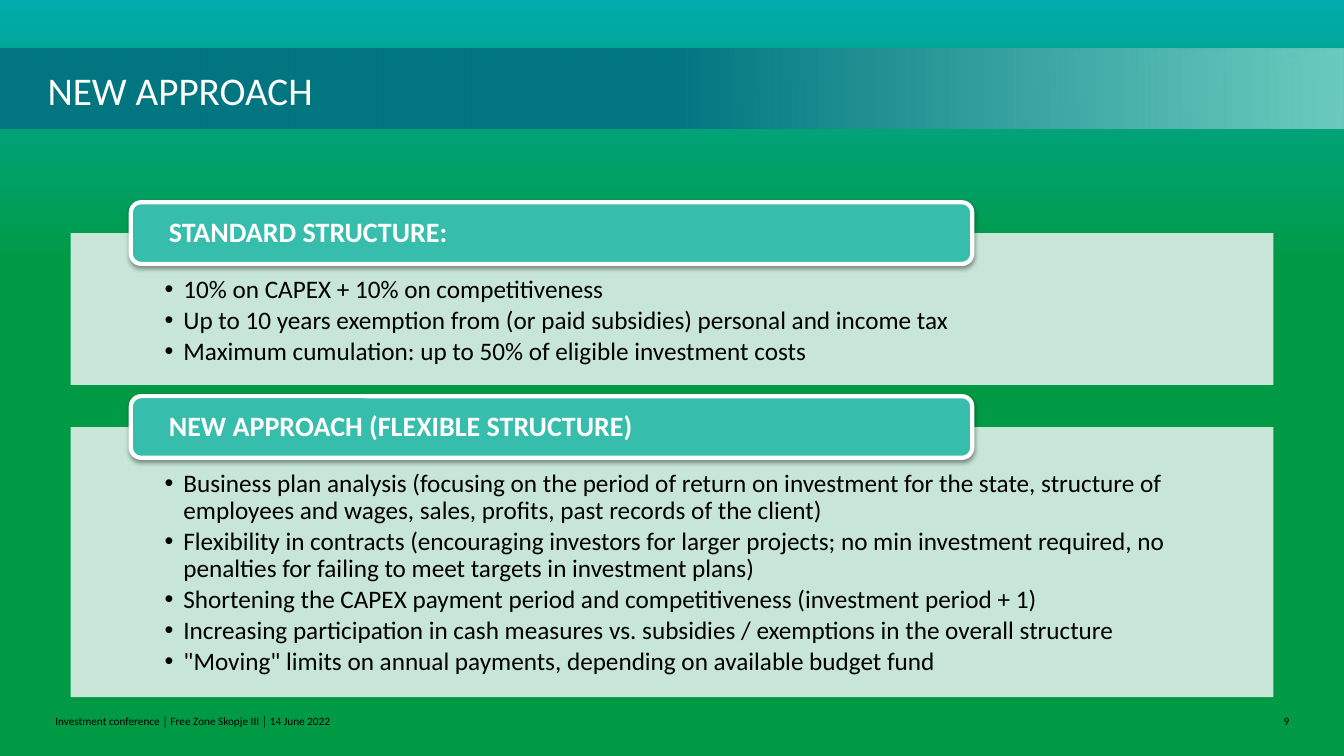
from lxml.etree import SubElement as Sub
from pptx import Presentation
from pptx.dml.color import RGBColor as Rgb
from pptx.enum.shapes import MSO_SHAPE as Shape
from pptx.enum.text import MSO_ANCHOR as Anchor, MSO_AUTO_SIZE as Auto, PP_ALIGN as Align
from pptx.oxml.ns import qn
from pptx.util import Pt

INK = {"sky": "00ABAB", "grass": "009A44", "mint": "71CEC2", "teal": "007680",
       "pale": "DDEFE8", "tab": "37BDAC", "white": "FFFFFF", "black": "000000"}


def rgb(name):
    """Return the named colour."""
    return Rgb.from_string(INK[name])


def place(shape, box):
    """Move a shape to a box given in points."""
    shape.left, shape.top, shape.width, shape.height = map(Pt, box)


def fade(fill, root, stops, angle):
    """Give a fill a linear gradient of (position, colour, opacity) stops."""
    fill.gradient()
    grad = root.find(".//" + qn("a:gradFill"))
    for part in list(grad):
        grad.remove(part)
    group = Sub(grad, qn("a:gsLst"))
    for pos, name, alpha in stops:
        stop = Sub(group, qn("a:gs"), pos=str(pos * 1000))
        tone = Sub(stop, qn("a:srgbClr"), val=INK[name])
        Sub(tone, qn("a:alpha"), val=str(alpha * 1000))
    Sub(grad, qn("a:lin"), ang=str(angle * 60000), scaled="0")


def write(shape, *lines, size=18, ink="black", bold=False, align=Align.LEFT,
          anchor=Anchor.TOP, pad=(0, 0, 0, 0), lead=1, after=0, dots=False):
    """Write lines of text into a shape in one format."""
    frame = shape.text_frame
    frame.word_wrap = True
    frame.auto_size = Auto.NONE
    frame.vertical_anchor = anchor
    (frame.margin_left, frame.margin_top,
     frame.margin_right, frame.margin_bottom) = map(Pt, pad)
    for num, line in enumerate(lines):
        para = frame.add_paragraph() if num else frame.paragraphs[0]
        para.alignment = align
        para.line_spacing = lead
        para.space_before = Pt(0)
        para.space_after = Pt(after)
        if dots:
            para.level = 1
            props = para._p.get_or_add_pPr()
            props.set("marL", str(Pt(13.5)))
            props.set("indent", str(-Pt(13.5)))
            Sub(props, qn("a:buFont"), typeface="Arial")
            Sub(props, qn("a:buChar"), char="•")
        run = para.add_run()
        run.text = line
        font = run.font
        font.name, font.size, font.bold = "Calibri", Pt(size), bold
        font.color.rgb = rgb(ink)


def band(title, box, text):
    """Turn the title into a band across the slide."""
    place(title, box)
    stops = [(0, "mint", 94), (50, "teal", 100), (100, "teal", 100)]
    fade(title.fill, title.element, stops, 180)
    write(title, text, size=28, ink="white", anchor=Anchor.MIDDLE,
          pad=(34, 7.2, 7.2, 7.2), lead=1.06)


def panel(slide, body, box, head, items):
    """Fill a pale list panel and set its heading tab on the top edge."""
    left, top = box[:2]
    place(body, box)
    body.fill.solid()
    body.fill.fore_color.rgb = rgb("pale")
    tone = body.element.spPr.find(".//" + qn("a:srgbClr"))
    Sub(tone, qn("a:alpha"), val="90000")
    write(body, *items, pad=(67, 31, 67, 10), lead=0.9, after=2.7, dots=True)

    tab = slide.shapes.add_shape(Shape.ROUNDED_RECTANGLE, 0, 0, 0, 0)
    place(tab, (left + 43, top - 22, 601, 44))
    tab.fill.solid()
    tab.fill.fore_color.rgb = rgb("tab")
    tab.line.color.rgb = rgb("white")
    tab.line.width = Pt(3)
    tab.shadow.inherit = False
    glow = Sub(tab.element.spPr.find(qn("a:effectLst")), qn("a:outerShdw"),
               blurRad=str(Pt(3.1)), dist=str(Pt(1.6)), dir="5400000", rotWithShape="0")
    shade = Sub(glow, qn("a:srgbClr"), val=INK["black"])
    Sub(shade, qn("a:alpha"), val="38000")
    write(tab, head, size=20, ink="white", bold=True, anchor=Anchor.MIDDLE,
          pad=(25, 0, 25, 0), lead=0.9)


def foot(slide, box, text, page):
    """Put the event name at the left and the page number at the right."""
    left, top, width, height = box
    num = 25
    for spot, span, line, align in (
            (left, width - num, text, Align.LEFT),
            (left + width - num, num, page, Align.RIGHT)):
        note = slide.shapes.add_textbox(0, 0, 0, 0)
        place(note, (spot, top, span, height))
        write(note, line, size=8, align=align)


def main():
    """Build and save the slide."""
    deck = Presentation()
    deck.slide_width, deck.slide_height = Pt(960), Pt(540)
    slide = deck.slides.add_slide(deck.slide_layouts[3])
    fade(slide.background.fill, slide.element,
         [(0, "sky", 100), (35, "grass", 100)], 90)
    title, first, second = slide.placeholders
    band(title, (0, 35, 960, 57), "NEW APPROACH")
    panel(slide, first, (50.5, 166.5, 859, 108.5), "STANDARD STRUCTURE:", [
        "10% on CAPEX + 10% on competitiveness",
        "Up to 10 years exemption from (or paid subsidies) personal and income tax",
        "Maximum cumulation: up to 50% of eligible investment costs",
    ])
    panel(slide, second, (50.5, 305, 859, 193), "NEW APPROACH (FLEXIBLE STRUCTURE)", [
        "Business plan analysis (focusing on the period of return on investment for "
        "the state, structure of employees and wages, sales, profits, past records "
        "of the client)",
        "Flexibility in contracts (encouraging investors for larger projects; no min "
        "investment required, no penalties for failing to meet targets in "
        "investment plans)",
        "Shortening the CAPEX payment period and competitiveness (investment period + 1)",
        "Increasing participation in cash measures vs. subsidies / exemptions in the "
        "overall structure",
        "\"Moving\" limits on annual payments, depending on available budget fund",
    ])
    foot(slide, (39.5, 510, 881.5, 10),
         "Investment conference │ Free Zone Skopje III │ 14 June 2022", "9")
    deck.save("out.pptx")


if __name__ == "__main__":
    main()
